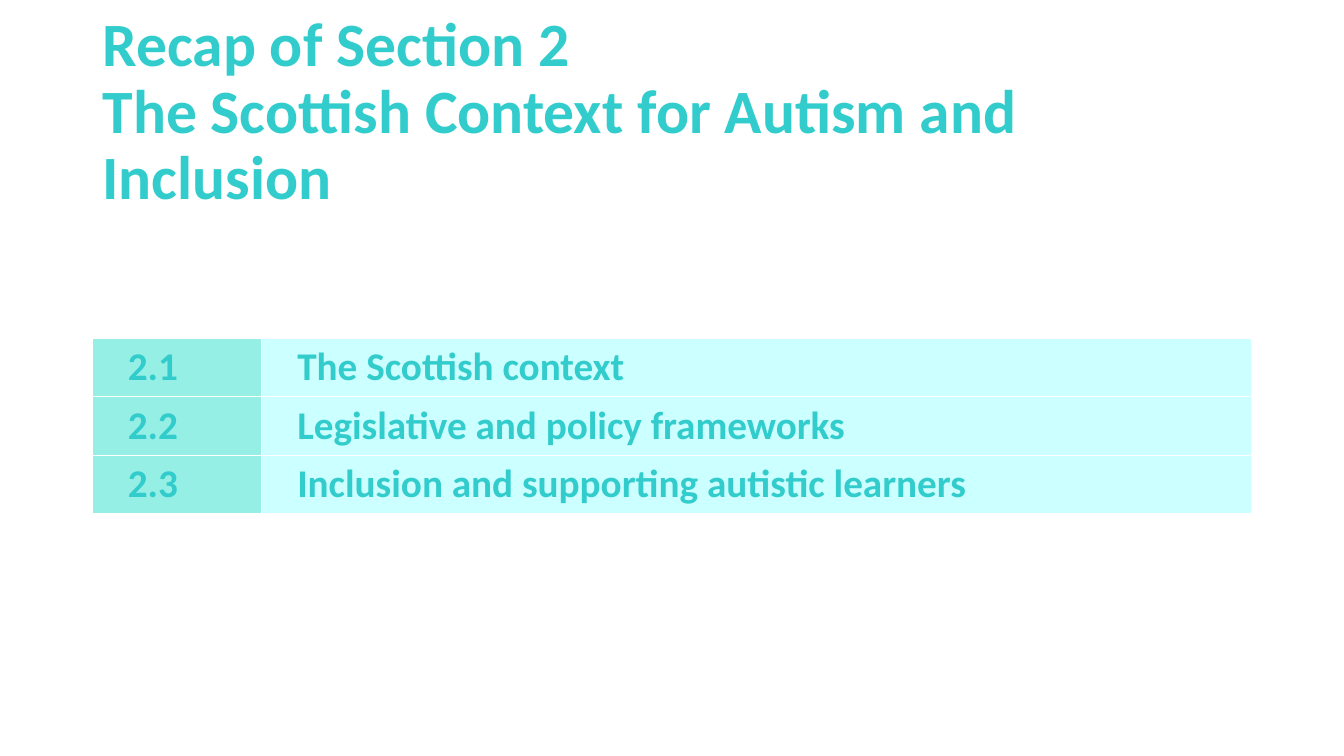
from lxml import etree
from pptx import Presentation
from pptx import util as u
from pptx.dml import color
from pptx.enum import text
from pptx.oxml import ns

TEAL, MINT, PALE, WHITE = "33CCCC", "95EFE4", "CCFFFF", "FFFFFF"
TOPICS = [
    ("2.1", "The Scottish context"),
    ("2.2", "Legislative and policy frameworks"),
    ("2.3", "Inclusion and supporting autistic learners"),
]
LEFT, WIDTH = u.Cm(2.33), u.Cm(29.21)
ROW = u.Cm(1.47)


def shade(code):
    """Turn a hex string into a colour."""
    return color.RGBColor.from_string(code)


def apply(item, **values):
    """Set each given attribute on an item."""
    for name, value in values.items():
        setattr(item, name, value)


def style(par, size):
    """Give a paragraph the bold teal font."""
    apply(par.font, name="Calibri", size=u.Pt(size), bold=True)
    par.font.color.rgb = shade(TEAL)


def add_title(slide, words):
    """Place and format the slide title."""
    title = slide.shapes.title
    apply(title, left=LEFT, top=u.Cm(1.02), width=WIDTH, height=u.Cm(3.68))
    frame = title.text_frame
    apply(frame, text=words, word_wrap=True,
          auto_size=text.MSO_AUTO_SIZE.NONE,
          vertical_anchor=text.MSO_ANCHOR.MIDDLE)
    par = frame.paragraphs[0]
    apply(par, alignment=text.PP_ALIGN.LEFT, line_spacing=0.9)
    style(par, 44)


def add_edges(cell):
    """Draw thin white borders around a cell."""
    props = cell._tc.get_or_add_tcPr()
    for spot, side in enumerate(("lnL", "lnR", "lnT", "lnB")):
        line = etree.Element(ns.qn(f"a:{side}"), w=str(u.Pt(1)))
        fill = etree.SubElement(line, ns.qn("a:solidFill"))
        etree.SubElement(fill, ns.qn("a:srgbClr"), val=WHITE)
        props.insert(spot, line)


def fill_cell(cell, words, back):
    """Write and colour one table cell."""
    cell.text = words
    cell.fill.solid()
    cell.fill.fore_color.rgb = shade(back)
    par = cell.text_frame.paragraphs[0]
    style(par, 28)
    props = par._p.get_or_add_pPr()
    props.set("marL", str(u.Cm(0.64)))
    props.set("indent", "0")
    add_edges(cell)


def add_topics(slide, topics):
    """Add the table of numbered topics."""
    count = len(topics)
    table = slide.shapes.add_table(
        count, 2, LEFT, u.Cm(8.53), WIDTH, ROW * count).table
    apply(table, first_row=False, horz_banding=False)
    for col, width in zip(table.columns, (4.27, 24.94)):
        col.width = u.Cm(width)
    for row, topic in zip(table.rows, topics):
        row.height = ROW
        for cell, words, back in zip(row.cells, topic, (MINT, PALE)):
            fill_cell(cell, words, back)


def main():
    """Build and save the recap slide."""
    deck = Presentation()
    apply(deck, slide_width=u.Cm(33.87), slide_height=u.Cm(19.05))
    slide = deck.slides.add_slide(deck.slide_layouts[5])
    add_title(slide, "Recap of Section 2 \v"
                     "The Scottish Context for Autism and Inclusion")
    add_topics(slide, TOPICS)
    deck.save("out.pptx")


if __name__ == "__main__":
    main()
